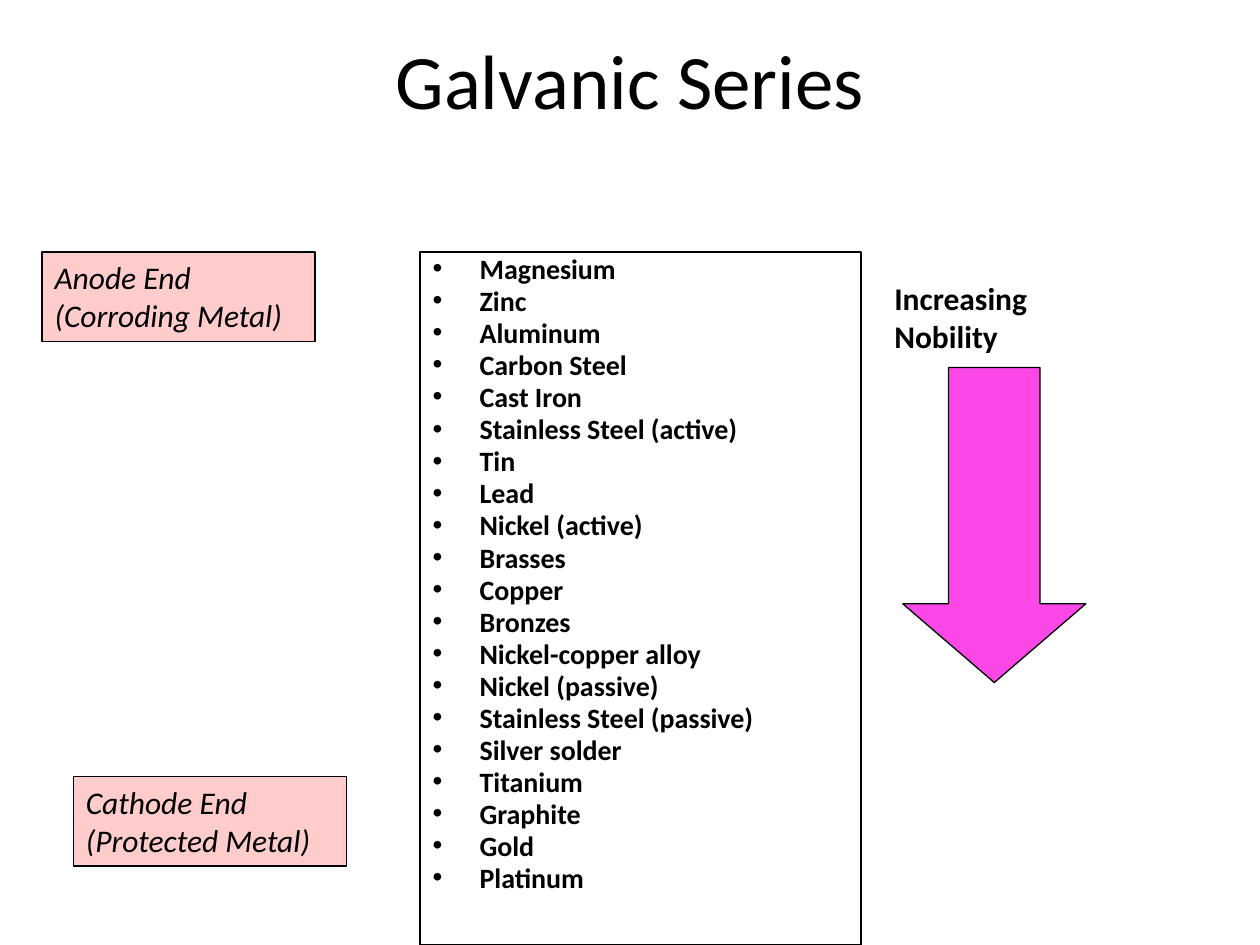
from dataclasses import dataclass, field

from lxml.etree import SubElement as Sub
from pptx import Presentation as Deck
from pptx.dml.color import RGBColor as Rgb
from pptx.enum.shapes import MSO_SHAPE as Kind
from pptx.enum.text import MSO_ANCHOR as Anchor, MSO_AUTO_SIZE as Fit, PP_ALIGN as Align
from pptx.oxml.ns import qn
from pptx.util import Cm, Pt

HUES = {"ink": "000000", "paper": "FFFFFF", "pink": "FFCCCC", "arrow": "FB47E6"}
METALS = [
    "Magnesium", "Zinc", "Aluminum", "Carbon Steel", "Cast Iron",
    "Stainless Steel (active)", "Tin", "Lead", "Nickel (active)", "Brasses",
    "Copper", "Bronzes", "Nickel-copper alloy", "Nickel (passive)",
    "Stainless Steel (passive)", "Silver solder", "Titanium", "Graphite",
    "Gold", "Platinum",
]


@dataclass
class Box:
    at: tuple
    lines: list = field(default_factory=list)
    font: dict = field(default_factory=dict)
    para: dict = field(default_factory=dict)
    frame: dict = field(default_factory=dict)
    fill: str = ""
    kind: Kind = Kind.RECTANGLE
    bullet: str = ""


def hue(name: str) -> Rgb:
    return Rgb.from_string(HUES[name])


def apply(obj, vals: dict) -> None:
    for key, val in vals.items():
        setattr(obj, key, val)


def mark(para, sign: str) -> None:
    props = para._p.get_or_add_pPr()
    apply_ind = {"marL": Cm(0.95), "indent": Cm(-0.95)}
    for key, val in apply_ind.items():
        props.set(key, str(val))
    Sub(props, qn("a:buFont")).set("typeface", "Arial")
    Sub(props, qn("a:buChar")).set("char", sign)


def write(frame, box: Box) -> None:
    apply(frame, {"word_wrap": True, "vertical_anchor": Anchor.TOP, **box.frame})
    for num, line in enumerate(box.lines):
        para = frame.add_paragraph() if num else frame.paragraphs[0]
        if box.bullet:
            mark(para, box.bullet)
        apply(para, {"alignment": Align.LEFT, **box.para})
        if not num:
            para.space_before = Pt(0)
        run = para.add_run()
        run.text = line
        apply(run.font, {"name": "Calibri", **box.font})
        run.font.color.rgb = hue("ink")


def draw(slide, box: Box):
    spot = [Cm(val) for val in box.at]
    if box.fill:
        shape = slide.shapes.add_shape(box.kind, *spot)
        shape.shadow.inherit = False
        shape.fill.solid()
        shape.fill.fore_color.rgb = hue(box.fill)
        shape.line.color.rgb = hue("ink")
        shape.line.width = Pt(0.75)
    else:
        shape = slide.shapes.add_textbox(*spot)
    if box.lines:
        write(shape.text_frame, box)
    return shape


def main() -> None:
    deck = Deck()
    apply(deck, {"slide_width": Cm(25.4), "slide_height": Cm(19.05)})
    slide = deck.slides.add_slide(deck.slide_layouts[6])
    grow = {"auto_size": Fit.SHAPE_TO_FIT_TEXT}
    slant = {"size": Pt(18), "italic": True}

    draw(slide, Box((1.27, 0, 22.86, 3.18), ["Galvanic Series"], {"size": Pt(44)},
                    {"alignment": Align.CENTER}, {"vertical_anchor": Anchor.MIDDLE}))
    draw(slide, Box((8.47, 5.08, 8.89, 13.97), METALS, {"size": Pt(16), "bold": True},
                    {"line_spacing": 0.8, "space_before": Pt(2.95)},
                    fill="paper", bullet="•"))
    ends = [
        (0.85, 5.08, "Anode End (Corroding Metal)"),
        (1.48, 15.66, "Cathode End (Protected Metal)"),
    ]
    for left, top, text in ends:
        draw(slide, Box((left, top, 5.5, 1.8), [text], slant, frame=grow, fill="pink"))
    arrow = draw(slide, Box((18.2, 7.41, 3.69, 6.35), fill="arrow", kind=Kind.DOWN_ARROW))
    for num, val in enumerate((0.5, 0.43)):
        arrow.adjustments[num] = val
    draw(slide, Box((17.78, 5.5, 4.23, 1.78), ["Increasing Nobility"],
                    {"size": Pt(18), "bold": True}, frame=grow))
    deck.save("out.pptx")


if __name__ == "__main__":
    main()
